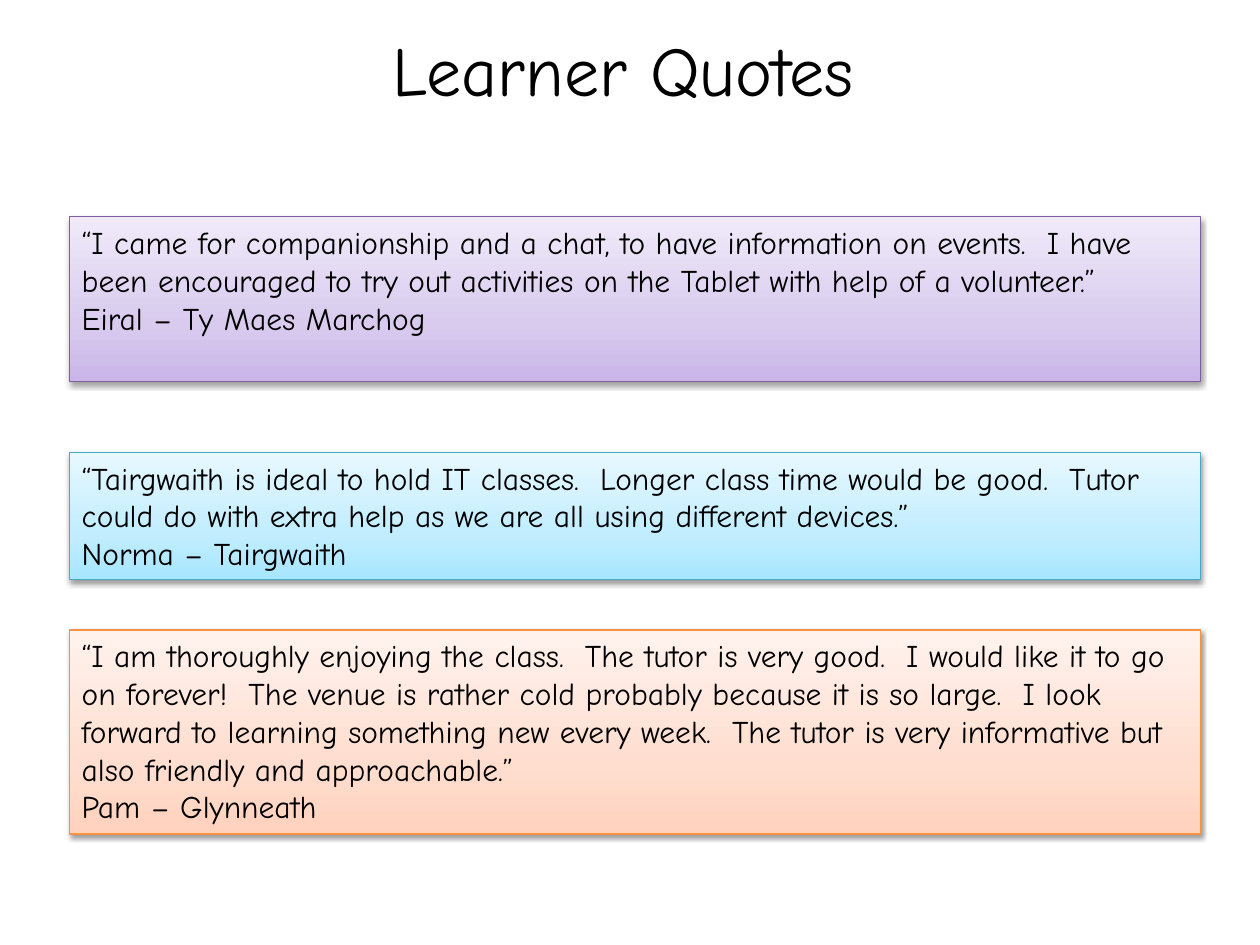
from copy import deepcopy
from dataclasses import dataclass

from lxml import etree
from pptx import Presentation
from pptx.dml.color import RGBColor
from pptx.enum.shapes import MSO_SHAPE
from pptx.enum.text import MSO_ANCHOR, PP_ALIGN
from pptx.oxml.ns import qn
from pptx.util import Inches, Pt

RECT = MSO_SHAPE.RECTANGLE
TOP = MSO_ANCHOR.TOP
LEFT, CENTER = PP_ALIGN.LEFT, PP_ALIGN.CENTER
FONT = "Comic Neue"
STOPS = (0, 0.35, 1)


@dataclass
class Quote:
    top: float
    height: float
    line: str
    shades: tuple[str, str, str]
    words: str
    name: str


QUOTES = [
    Quote(1.72, 1.31, "7D60A0", ("C9B5E8", "D8CBEE", "F0EAF9"),
          "“I came for companionship and a chat, to have information on events.  "
          "I have been encouraged to try out activities on the Tablet with help "
          "of a volunteer.”",
          "Eiral – Ty Maes Marchog"),
    Quote(3.59, 1.01, "46AAC5", ("A7E6FF", "C1EDFF", "E7F8FF"),
          "“Tairgwaith is ideal to hold IT classes.  Longer class time would be "
          "good.  Tutor could do with extra help as we are all using different "
          "devices.”",
          "Norma – Tairgwaith"),
    Quote(5, 1.62, "F69240", ("FFD2BD", "FFDED0", "FFF2ED"),
          "“I am thoroughly enjoying the class.  The tutor is very good.  I would "
          "like it to go on forever!  The venue is rather cold probably because "
          "it is so large.  I look forward to learning something new every week.  "
          "The tutor is very informative but also friendly and approachable.”",
          "Pam – Glynneath"),
]


def color(code: str) -> RGBColor:
    return RGBColor.from_string(code)


def write(shape, *lines: str, size: float = 18, align=LEFT, ink: str = "000000") -> None:
    frame = shape.text_frame
    frame.word_wrap = True
    frame.vertical_anchor = TOP
    for i, line in enumerate(lines):
        para = frame.add_paragraph() if i else frame.paragraphs[0]
        para.alignment = align
        run = para.add_run()
        run.text = line
        run.font.name = FONT
        run.font.size = Pt(size)
        run.font.color.rgb = color(ink)


def shade(shape, codes: tuple[str, str, str]) -> None:
    fill = shape.fill
    fill.gradient()
    fill.gradient_angle = 90
    stops = shape.element.spPr.find(".//" + qn("a:gsLst"))
    stops.append(deepcopy(stops[0]))
    for stop, place, code in zip(fill.gradient_stops, STOPS, codes):
        stop.position = place
        stop.color.rgb = color(code)


def shadow(shape) -> None:
    shape.shadow.inherit = False
    effects = shape.element.spPr.find(qn("a:effectLst"))
    outer = etree.SubElement(effects, qn("a:outerShdw"), blurRad="40000",
                             dist="20000", dir="5400000", rotWithShape="0")
    tint = etree.SubElement(outer, qn("a:srgbClr"), val="000000")
    etree.SubElement(tint, qn("a:alpha"), val="38000")


def draw(slide, quote: Quote) -> None:
    box = slide.shapes.add_shape(RECT, Inches(0.55), Inches(quote.top),
                                 Inches(8.98), Inches(quote.height))
    shade(box, quote.shades)
    box.line.color.rgb = color(quote.line)
    box.line.width = Pt(0.75)
    shadow(box)
    write(box, quote.words, quote.name)


def main() -> None:
    """Build the slide of learner quotes."""
    deck = Presentation()
    deck.slide_width, deck.slide_height = Inches(10), Inches(7.5)
    slide = deck.slides.add_slide(deck.slide_layouts[6])
    title = slide.shapes.add_textbox(Inches(1.8), Inches(0.16), Inches(6.48), Inches(0.77))
    write(title, "Learner Quotes ", size=40, align=CENTER)
    for quote in QUOTES:
        draw(slide, quote)
    deck.save("out.pptx")


if __name__ == "__main__":
    main()
